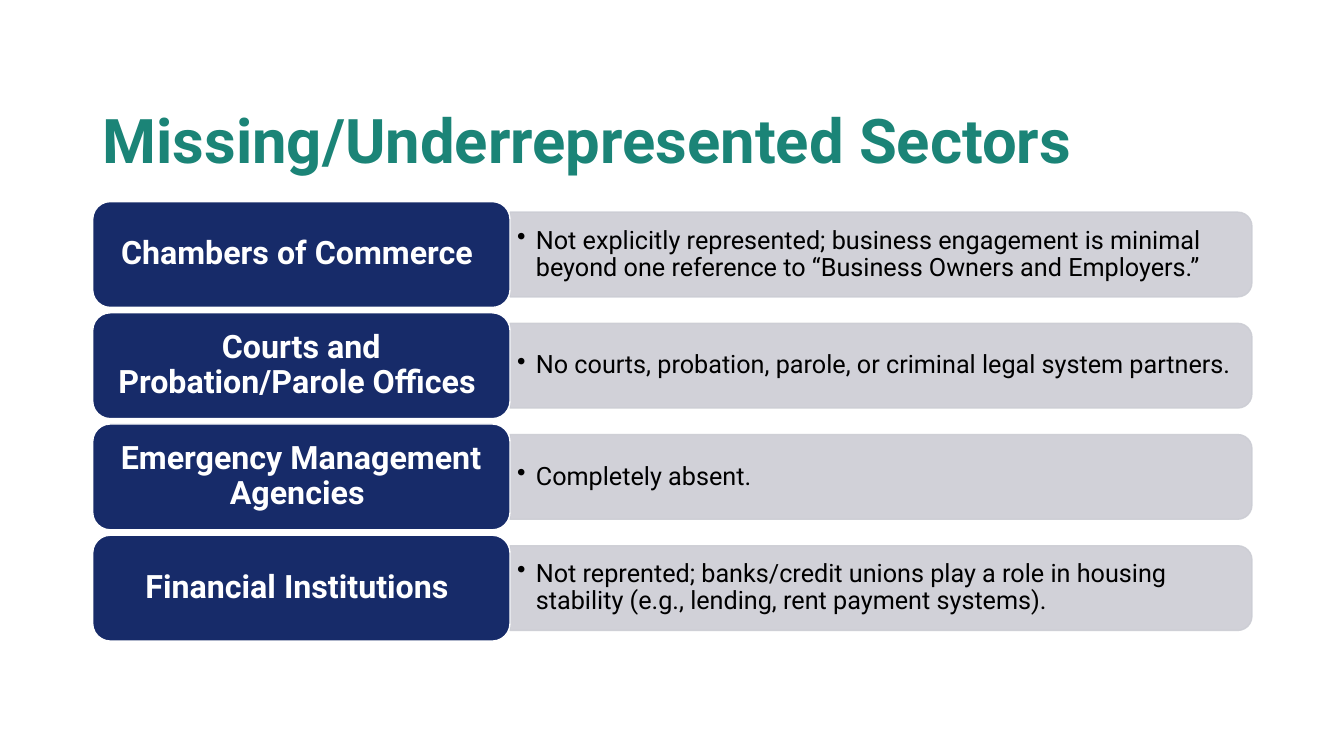
from lxml.etree import SubElement
from pptx import Presentation
from pptx.dml.color import RGBColor
from pptx.enum.shapes import MSO_SHAPE
from pptx.enum.text import MSO_ANCHOR, PP_ALIGN
from pptx.oxml.ns import qn
from pptx.util import Pt

TEAL = RGBColor(0x1B, 0x84, 0x77)
NAVY = RGBColor(0x17, 0x2B, 0x69)
GRAY = RGBColor(0xCC, 0xCD, 0xD4)
WHITE = RGBColor(0xFF, 0xFF, 0xFF)
BLACK = RGBColor(0x00, 0x00, 0x00)

TITLE_FONT = {"name": "Roboto", "size": Pt(44), "bold": True}
LABEL_FONT = {"name": "Roboto", "size": Pt(23), "bold": True}
DETAIL_FONT = {"name": "Roboto", "size": Pt(18), "bold": False}

TITLE_BOX = (66.24, 72, 828, 61.2)
SECTORS_BOX = (66.24, 144, 828, 313.9)
ROW_HEIGHT = 75.6
LABEL_SHARE = 0.36
BAR_SHARE = 0.8

# The detail texts and labels end in a no-break space
SECTORS = [
    ("Chambers of Commerce ",
     "Not explicitly represented; business engagement is minimal beyond "
     "one reference to “Business Owners and Employers.” "),
    ("Courts and Probation/Parole Offices ",
     "No courts, probation, parole, or criminal legal system partners. "),
    ("Emergency Management Agencies ",
     "Completely absent. "),
    ("Financial Institutions ",
     "Not reprented; banks/credit unions play a role in housing stability "
     "(e.g., lending, rent payment systems). "),
]


def points(*values):
    return [Pt(value) for value in values]


def write_text(shape, text, font, color, align=PP_ALIGN.LEFT,
               insets=(7.2, 3.6), bullet=False):
    frame = shape.text_frame
    side, edge = points(*insets)
    settings = {"word_wrap": True, "vertical_anchor": MSO_ANCHOR.MIDDLE,
                "margin_left": side, "margin_right": side,
                "margin_top": edge, "margin_bottom": edge}
    for name, value in settings.items():
        setattr(frame, name, value)
    paragraph = frame.paragraphs[0]
    paragraph.text = text
    paragraph.alignment = align
    paragraph.line_spacing = 0.9
    if bullet:
        properties = paragraph._p.get_or_add_pPr()
        properties.set("marL", str(Pt(13.5)))
        properties.set("indent", str(-Pt(13.5)))
        SubElement(properties, qn("a:buChar"), char="•")
    run_font = paragraph.runs[0].font
    for name, value in font.items():
        setattr(run_font, name, value)
    run_font.color.rgb = color


def add_block(slide, kind, box, fill, line):
    shape = slide.shapes.add_shape(kind, *points(*box))
    shape.shadow.inherit = False
    shape.fill.solid()
    shape.fill.fore_color.rgb = fill
    shape.line.color.rgb = line
    shape.line.width = Pt(1)
    return shape


def add_title(slide, box):
    title = slide.shapes.add_textbox(*points(*box))
    write_text(title, "Missing/Underrepresented Sectors", TITLE_FONT, TEAL)


def add_sector(slide, box, label_text, detail_text):
    left, top, width, height = box
    label_width = width * LABEL_SHARE
    bar_left = left + label_width
    bar_width = width - label_width
    bar_height = height * BAR_SHARE

    # Bar rounded on its right side: an upright shape turned by 90 degrees
    center_x, center_y = bar_left + bar_width / 2, top + height / 2
    bar = add_block(slide, MSO_SHAPE.ROUND_2_SAME_RECTANGLE,
                    (center_x - bar_height / 2, center_y - bar_width / 2,
                     bar_height, bar_width), GRAY, GRAY)
    bar.rotation = 90
    for color in bar._element.spPr.iter(qn("a:srgbClr")):
        SubElement(color, qn("a:alpha"), val="90000")

    # Detail text over the bar
    text_height = bar_height - 6
    detail = slide.shapes.add_textbox(
        *points(bar_left, center_y - text_height / 2, bar_width - 3, text_height))
    write_text(detail, detail_text, DETAIL_FONT, BLACK,
               insets=(5, 2.5), bullet=True)

    # Sector label
    label = add_block(slide, MSO_SHAPE.ROUNDED_RECTANGLE,
                      (left, top, label_width, height), NAVY, WHITE)
    write_text(label, label_text, LABEL_FONT, WHITE, PP_ALIGN.CENTER)


def add_sectors(slide, box):
    left, top, width, height = box
    step = (height - ROW_HEIGHT) / (len(SECTORS) - 1)
    for row, (label_text, detail_text) in enumerate(SECTORS):
        add_sector(slide, (left, top + row * step, width, ROW_HEIGHT),
                   label_text, detail_text)


def main():
    presentation = Presentation()
    presentation.slide_width = Pt(960)
    presentation.slide_height = Pt(540)
    slide = presentation.slides.add_slide(presentation.slide_layouts[6])
    add_title(slide, TITLE_BOX)
    add_sectors(slide, SECTORS_BOX)
    presentation.save("out.pptx")


if __name__ == "__main__":
    main()
